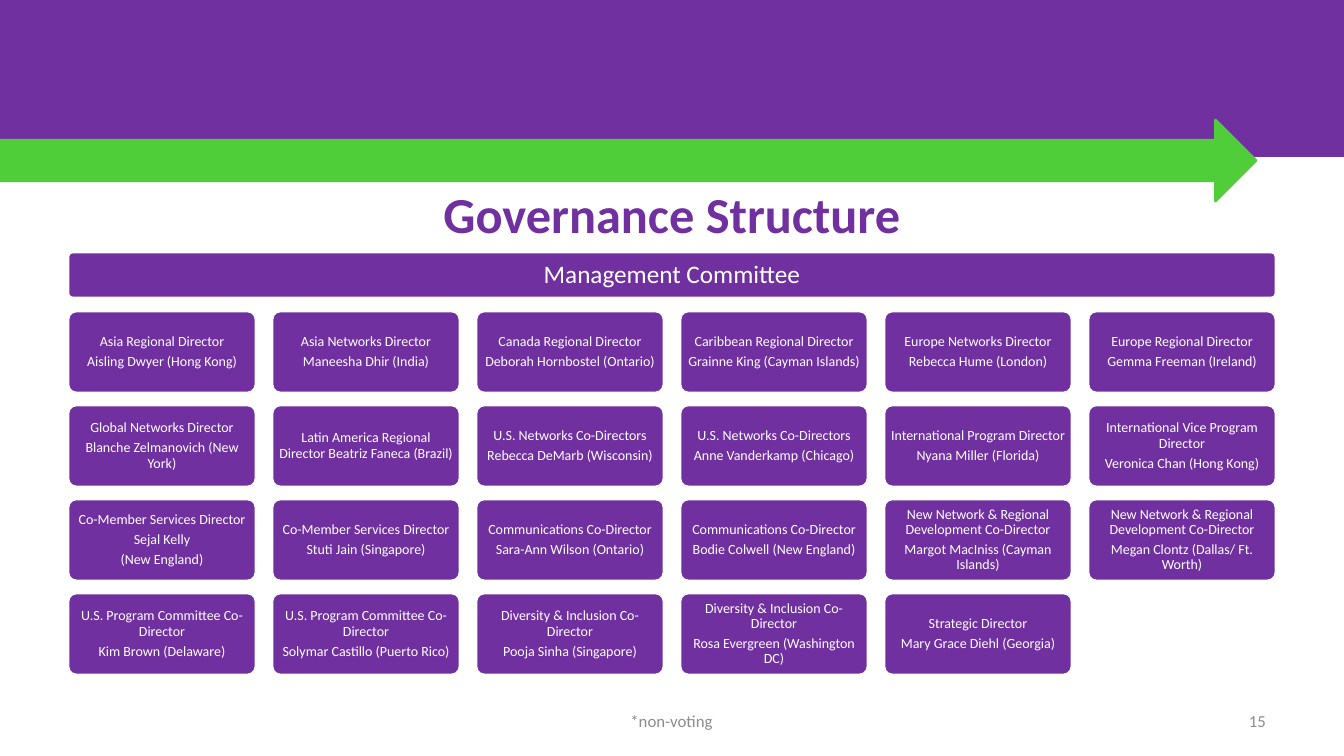
"""Build the Governance Structure slide with its grid of committee members."""
from dataclasses import dataclass

from pptx import Presentation
from pptx.dml.color import RGBColor
from pptx.enum.shapes import MSO_SHAPE
from pptx.enum.text import MSO_ANCHOR, MSO_AUTO_SIZE, PP_ALIGN
from pptx.shapes.autoshape import Shape
from pptx.slide import Slide
from pptx.util import Emu, Pt

RECTANGLE = MSO_SHAPE.RECTANGLE
ARROW = MSO_SHAPE.RIGHT_ARROW
ROUNDED = MSO_SHAPE.ROUNDED_RECTANGLE
CENTER, RIGHT = PP_ALIGN.CENTER, PP_ALIGN.RIGHT
MIDDLE = MSO_ANCHOR.MIDDLE
NO_FIT = MSO_AUTO_SIZE.NONE
TITLE_ONLY = 5
PX_PER_INCH = 100.8


@dataclass(frozen=True)
class Theme:
    """Colours, font and type sizes of the slide."""
    purple: str = "7030A0"
    green: str = "4FCE3A"
    white: str = "FFFFFF"
    grey: str = "8C8C8C"
    font: str = "Calibri"
    title: int = 36
    heading: int = 18
    footer: int = 12
    card: int = 10
    line: int = 2
    corner: float = 0.1


@dataclass(frozen=True)
class Area:
    """A rectangle in px."""
    left: int
    top: int
    width: int
    height: int


@dataclass(frozen=True)
class TextStyle:
    """How the text of one box looks."""
    size: int
    color: str
    align: PP_ALIGN = CENTER
    bold: bool = False
    inset: tuple[int, int] = (10, 5)
    spacing: float = 1.0
    after: float = 0


@dataclass(frozen=True)
class Footer:
    """A line of text at the foot of the slide."""
    text: str
    area: Area
    align: PP_ALIGN


THEME = Theme()
TITLE_STYLE = TextStyle(THEME.title, THEME.purple, bold=True)
HEADING_STYLE = TextStyle(THEME.heading, THEME.white, inset=(7, 7), spacing=0.9, after=6.3)
CARD_STYLE = TextStyle(THEME.card, THEME.white, inset=(4, 4), spacing=0.9, after=3.5)

BAND_AREA = Area(0, 1, 1344, 155)
ARROW_AREA = Area(0, 120, 1256, 81)
TITLE_AREA = Area(67, 184, 1210, 59)
HEADING_AREA = Area(68, 252, 1208, 46)
FIRST_CARD = Area(68, 311, 188, 82)
COLUMN_STEP, ROW_STEP = 204, 94

FOOTERS = (
    Footer("15", Area(963, 701, 313, 40), RIGHT),
    Footer("*non-voting", Area(459, 701, 425, 40), CENTER),
)

MEMBER_ROWS = (
    (
        ("Asia Regional Director", "Aisling Dwyer (Hong Kong)"),
        ("Asia Networks Director", "Maneesha Dhir (India)"),
        ("Canada Regional Director", "Deborah Hornbostel (Ontario)"),
        ("Caribbean Regional Director", "Grainne King (Cayman Islands)"),
        ("Europe Networks Director", "Rebecca Hume (London)"),
        ("Europe Regional Director", "Gemma Freeman (Ireland)"),
    ),
    (
        ("Global Networks Director", "Blanche Zelmanovich (New York)"),
        ("Latin America Regional Director Beatriz Faneca (Brazil)",),
        ("U.S. Networks Co-Directors", "Rebecca DeMarb (Wisconsin)"),
        ("U.S. Networks Co-Directors", "Anne Vanderkamp (Chicago)"),
        ("International Program Director", "Nyana Miller (Florida)"),
        ("International Vice Program Director", "Veronica Chan (Hong Kong)"),
    ),
    (
        ("Co-Member Services Director", "Sejal Kelly", "(New England)"),
        ("Co-Member Services Director", "Stuti Jain (Singapore)"),
        ("Communications Co-Director", "Sara-Ann Wilson (Ontario)"),
        ("Communications Co-Director", "Bodie Colwell (New England)"),
        ("New Network & Regional Development Co-Director", "Margot MacIniss (Cayman Islands)"),
        ("New Network & Regional Development Co-Director", "Megan Clontz (Dallas/ Ft. Worth)"),
    ),
    (
        ("U.S. Program Committee Co-Director", "Kim Brown (Delaware)"),
        ("U.S. Program Committee Co-Director", "Solymar Castillo (Puerto Rico)"),
        ("Diversity & Inclusion Co-Director", "Pooja Sinha (Singapore)"),
        ("Diversity & Inclusion Co-Director", "Rosa Evergreen (Washington DC)"),
        ("Strategic Director", "Mary Grace Diehl (Georgia)"),
    ),
)


def px(length: int) -> Emu:
    """Turn px into EMU."""
    return Emu(round(length * 914400 / PX_PER_INCH))


def bounds(area: Area) -> tuple[Emu, Emu, Emu, Emu]:
    """Give an area in EMU."""
    return px(area.left), px(area.top), px(area.width), px(area.height)


def apply_format(target: object, values: dict[str, object]) -> None:
    """Set each named attribute on the target."""
    for name, value in values.items():
        setattr(target, name, value)


def write_text(box: Shape, lines: tuple[str, ...], style: TextStyle) -> None:
    """Fill a box with one paragraph for each line."""
    frame = box.text_frame
    across, down = map(px, style.inset)
    apply_format(frame, {
        "word_wrap": True, "auto_size": NO_FIT, "vertical_anchor": MIDDLE,
        "margin_left": across, "margin_right": across,
        "margin_top": down, "margin_bottom": down,
    })
    frame.text = "\n".join(lines)
    for para in frame.paragraphs:
        apply_format(para, {
            "alignment": style.align, "line_spacing": style.spacing,
            "space_after": Pt(style.after),
        })
        for span in para.runs:
            apply_format(span.font, {
                "name": THEME.font, "size": Pt(style.size), "bold": style.bold,
            })
            span.font.color.rgb = RGBColor.from_string(style.color)


def add_block(page: Slide, kind: MSO_SHAPE, area: Area, fill: str, line: str) -> Shape:
    """Draw a filled and outlined shape."""
    block = page.shapes.add_shape(kind, *bounds(area))
    block.shadow.inherit = False
    block.fill.solid()
    block.fill.fore_color.rgb = RGBColor.from_string(fill)
    block.line.color.rgb = RGBColor.from_string(line)
    block.line.width = Pt(THEME.line)
    return block


def add_card(page: Slide, area: Area, lines: tuple[str, ...], style: TextStyle) -> None:
    """Draw a rounded purple card with text."""
    card = add_block(page, ROUNDED, area, THEME.purple, THEME.white)
    card.adjustments[0] = THEME.corner
    write_text(card, lines, style)


def main() -> None:
    """Build and save the deck."""
    deck = Presentation()
    deck.slide_width, deck.slide_height = px(1344), px(756)
    page = deck.slides.add_slide(deck.slide_layouts[TITLE_ONLY])

    add_block(page, RECTANGLE, BAND_AREA, THEME.purple, THEME.purple)
    add_block(page, ARROW, ARROW_AREA, THEME.green, THEME.green)

    title = page.shapes.title
    apply_format(title, dict(zip(("left", "top", "width", "height"), bounds(TITLE_AREA))))
    write_text(title, ("Governance Structure",), TITLE_STYLE)

    add_card(page, HEADING_AREA, ("Management Committee",), HEADING_STYLE)
    for row, members in enumerate(MEMBER_ROWS):
        for column, lines in enumerate(members):
            area = Area(FIRST_CARD.left + column * COLUMN_STEP, FIRST_CARD.top + row * ROW_STEP,
                        FIRST_CARD.width, FIRST_CARD.height)
            add_card(page, area, lines, CARD_STYLE)

    for footer in FOOTERS:
        box = page.shapes.add_textbox(*bounds(footer.area))
        write_text(box, (footer.text,), TextStyle(THEME.footer, THEME.grey, footer.align))

    deck.save("out.pptx")


if __name__ == "__main__":
    main()
